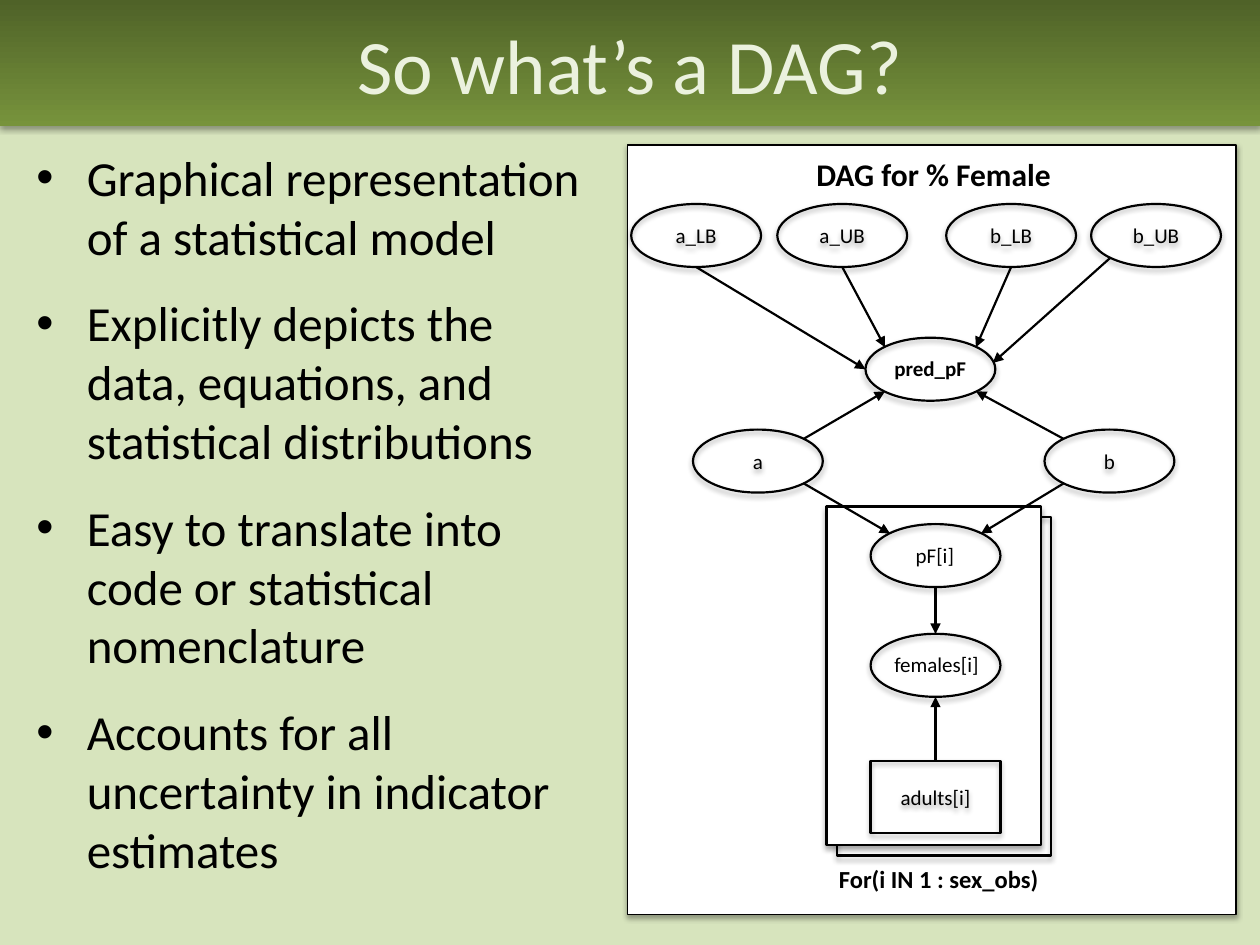
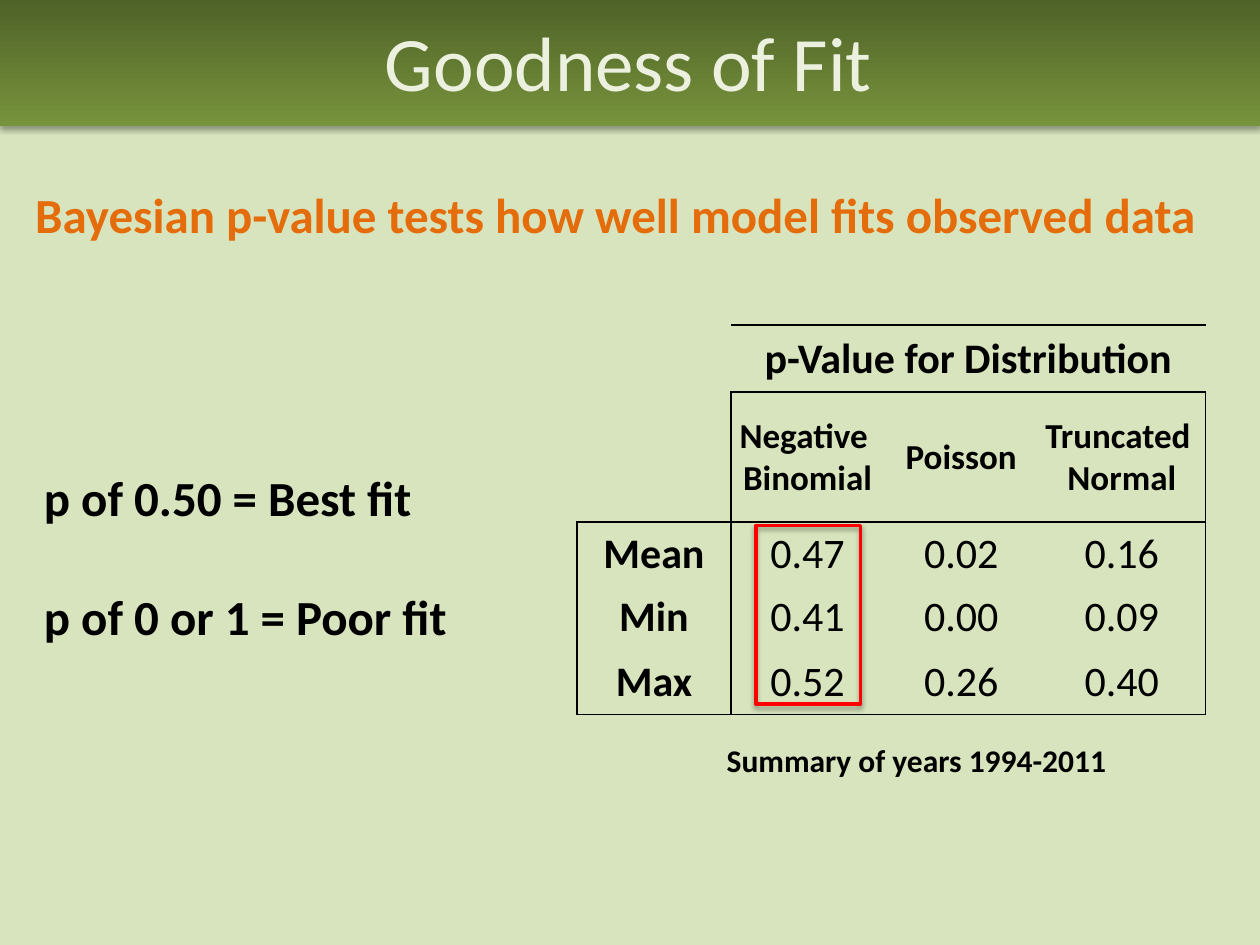
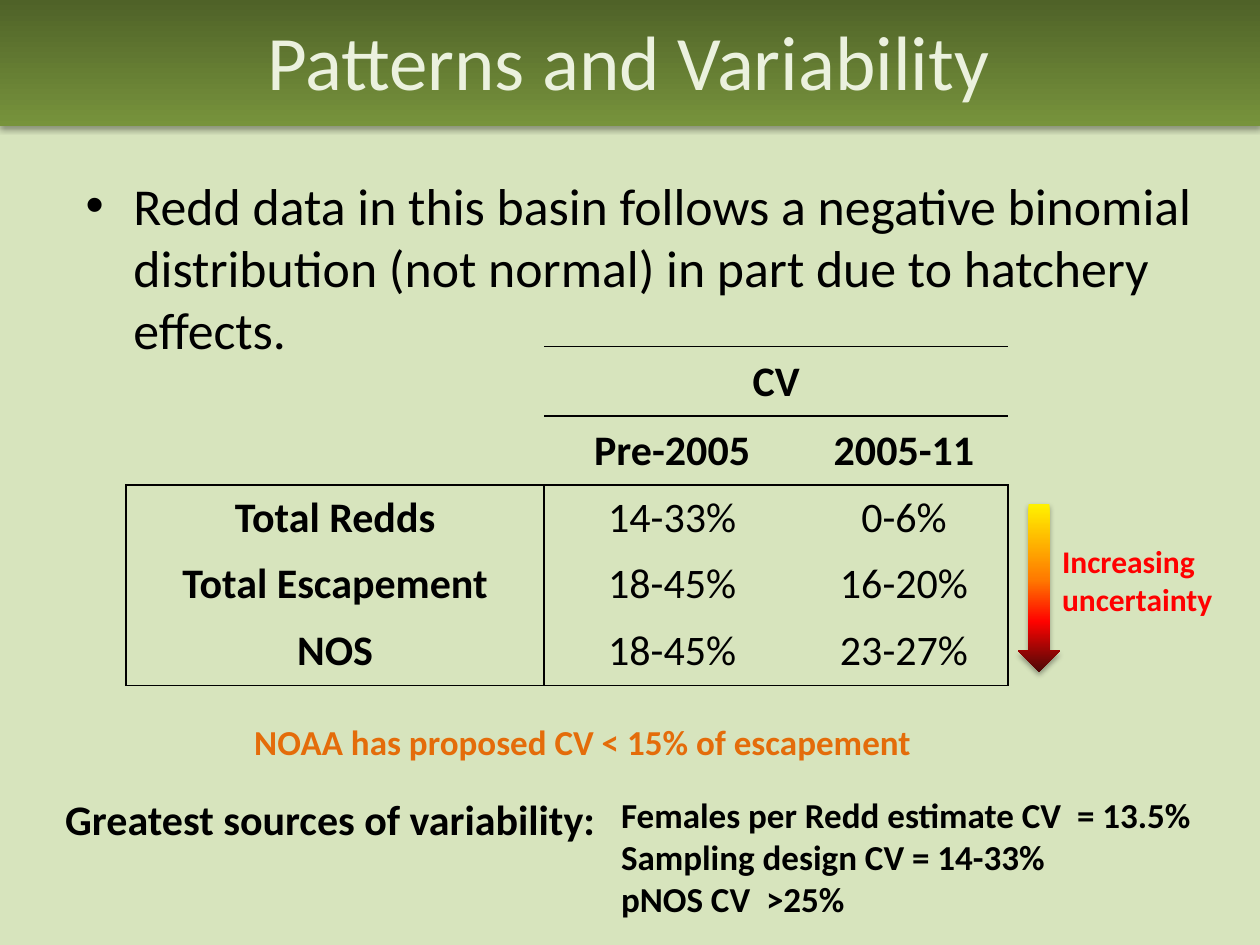
from pptx import Presentation
from pptx.dml.color import RGBColor
from pptx.enum.shapes import MSO_CONNECTOR as CONNECTOR, MSO_SHAPE as SHAPE
from pptx.enum.text import MSO_ANCHOR as ANCHOR, MSO_AUTO_SIZE as AUTO_SIZE, PP_ALIGN as ALIGN
from pptx.oxml.ns import qn
from pptx.util import Pt
from lxml.etree import SubElement, Element

# Shared look
FONT = "Calibri"
BACKGROUND, BLACK, WHITE = "D7E4BD", "000000", "FFFFFF"
TITLE, ORANGE, RED = "EBF1DE", "E46C0A", "FF0000"
BAND_STOPS = [(0, "4F6228"), (100, "77933C")]
ARROW_STOPS = [(0, "FFF200"), (45, "FF7A00"), (70, "FF0300"), (100, "4D0808")]

# DAG slide
DAG_BULLETS = [
    "Graphical representation of a statistical model",
    "Explicitly depicts the data, equations, and statistical distributions",
    "Easy to translate into code or statistical nomenclature",
    "Accounts for all uncertainty in indicator estimates",
]
PANEL = (358.6, 82.8, 347.8, 439.9)
PLATE = (472.3, 289.4, 122.4, 193.7)
PLATE_OFFSET = 5.8
NODE_WIDTH, NODE_HEIGHT, DATA_HEIGHT = 74.2, 36, 41
NODES = {
    "a_LB": (360.7, 116.6), "a_UB": (444.2, 116.6),
    "b_LB": (540.7, 116.6), "b_UB": (623.5, 116.6),
    "pred_pF": (494.6, 193),
    "a": (396, 245.5), "b": (596.9, 245.5),
    "pF[i]": (497.5, 299.5), "females[i]": (497.5, 362.2),
    "adults[i]": (497.5, 434.9),
}
# Nodes whose label lies in a box of its own
LABEL_BOXES = {
    "pred_pF": (504, 199.4, 74.9, 21.6),
    "pF[i]": (516.2, 306.7, 38.2, 22.3),
    "females[i]": (504, 368.6, 74.9, 21.6),
}
# Points on a node's outline, as shares of its width and height
SITES = {
    "top": (0.5, 0), "bottom": (0.5, 1), "left": (0, 0.5),
    "top left": (0.15, 0.15), "top right": (0.85, 0.15),
    "bottom left": (0.15, 0.85), "bottom right": (0.85, 0.85),
    "upper right": (0.98, 0.4),
}
EDGES = [
    ("a_LB", "bottom", "pred_pF", "left"),
    ("a_UB", "bottom", "pred_pF", "top left"),
    ("b_LB", "bottom", "pred_pF", "top right"),
    ("b_UB", "bottom left", "pred_pF", "upper right"),
    ("a", "top right", "pred_pF", "bottom left"),
    ("b", "top left", "pred_pF", "bottom right"),
    ("a", "bottom right", "pF[i]", "top left"),
    ("b", "bottom left", "pF[i]", "top right"),
    ("pF[i]", "bottom", "females[i]", "top"),
    ("adults[i]", "top", "females[i]", "bottom"),
]

# Tables: border letters are left, right, top, bottom; "-" is none
FIT_TABLE = {
    "at": (329.8, 185.8),
    "columns": [87.8, 87.8, 87.8, 95.8],
    "heights": [38.2, 74.2, 36, 36, 38.2],
    "sizes": [24, 20, 24, 24, 24],
    "rows": [
        ["", "p-Value for Distribution", "", ""],
        ["", "Negative \vBinomial", "Poisson", "Truncated \vNormal"],
        ["Mean", "0.47", "0.02", "0.16"],
        ["Min", "0.41", "0.00", "0.09"],
        ["Max", "0.52", "0.26", "0.40"],
    ],
    "borders": ["- tb tb tb", "rb ltb tb trb", "ltr lt t tr", "lr l - r", "lrb lb b rb"],
}
CV_TABLE = {
    "at": (72, 198),
    "columns": [239, 146.2, 118.8],
    "heights": [39.6, 39.6, 37.4, 37.4, 39.6],
    "sizes": [24] * 5,
    "rows": [
        ["", "CV", ""],
        ["", "Pre-2005", "2005-11"],
        ["Total Redds", "14-33%", "0-6%"],
        ["Total Escapement", "18-45%", "16-20%"],
        ["NOS", "18-45%", "23-27%"],
    ],
    "borders": ["- tb tb", "b tb tb", "ltr lt tr", "lr l r", "lrb lb rb"],
}
HEADER_ROWS = 2
REDD_BULLET = ("Redd data in this basin follows a negative binomial distribution "
               "(not normal) in part due to hatchery effects.")
VARIABILITY_SOURCES = [
    ("Females per Redd estimate CV  = 13.5%", 343.4),
    ("Sampling design CV = 14-33%", 263.5),
    ("pNOS CV  >25%", 148.3),
]


def rgb(value):
    return RGBColor.from_string(value)


def points(values):
    return [Pt(value) for value in values]


def style(paragraph, size, color=BLACK, bold=False):
    for run in paragraph.runs:
        font = run.font
        font.name, font.size, font.bold = FONT, Pt(size), bold
        font.color.rgb = rgb(color)


def add_bullet(paragraph, indent):
    properties = paragraph._p.get_or_add_pPr()
    properties.set("marL", str(Pt(indent)))
    properties.set("indent", str(-Pt(indent)))
    SubElement(properties, qn("a:buFont"), typeface="Arial")
    SubElement(properties, qn("a:buChar"), char="•")


def add_text(slide, lines, box, size, color=BLACK, bold=False, wrap=True, align=ALIGN.LEFT,
             anchor=ANCHOR.TOP, indent=0, before=0, after=0, grow=True):
    frame = slide.shapes.add_textbox(*points(box)).text_frame
    frame.word_wrap = wrap
    frame.auto_size = AUTO_SIZE.SHAPE_TO_FIT_TEXT if grow else AUTO_SIZE.NONE
    frame.vertical_anchor = anchor
    frame.text = "\n".join(lines)
    for index, paragraph in enumerate(frame.paragraphs):
        paragraph.alignment = align
        if before and index:
            paragraph.space_before = Pt(before)
        if after:
            paragraph.space_after = Pt(after)
        if indent:
            add_bullet(paragraph, indent)
        style(paragraph, size, color, bold)


def add_shadow(shape):
    shape.shadow.inherit = False
    effects = shape._element.spPr.find(qn("a:effectLst"))
    shadow = SubElement(effects, qn("a:outerShdw"), blurRad=str(Pt(3.1)), dist=str(Pt(1.8)),
                        dir="5400000", rotWithShape="0")
    color = SubElement(shadow, qn("a:srgbClr"), val=BLACK)
    SubElement(color, qn("a:alpha"), val="35000")


def fill_gradient(shape, stops):
    shape.fill.gradient()
    shape.fill.gradient_angle = 270
    stop_list = shape._element.spPr.find(qn("a:gradFill")).find(qn("a:gsLst"))
    for old_stop in list(stop_list):
        stop_list.remove(old_stop)
    for position, color in stops:
        stop = SubElement(stop_list, qn("a:gs"), pos=str(position * 1000))
        SubElement(stop, qn("a:srgbClr"), val=color)


def add_box(slide, kind, box, fill=None, line=None, width=1.25, stops=None):
    shape = slide.shapes.add_shape(kind, *points(box))
    if stops:
        fill_gradient(shape, stops)
    elif fill:
        shape.fill.solid()
        shape.fill.fore_color.rgb = rgb(fill)
    else:
        shape.fill.background()
    if line:
        shape.line.color.rgb = rgb(line)
        shape.line.width = Pt(width)
    else:
        shape.line.fill.background()
    add_shadow(shape)
    return shape


def add_arrow(slide, start, end):
    connector = slide.shapes.add_connector(CONNECTOR.STRAIGHT, *points(start + end))
    connector.line.color.rgb = rgb(BLACK)
    connector.line.width = Pt(1.25)
    properties = connector._element.spPr
    SubElement(properties.find(qn("a:ln")), qn("a:tailEnd"), type="triangle")
    SubElement(properties, qn("a:effectLst"))


def set_borders(cell, sides):
    properties = cell._tc.get_or_add_tcPr()
    for index, side in enumerate("lrtb"):
        line = Element(qn("a:ln" + side.upper()), w=str(Pt(1)))
        if side in sides:
            SubElement(SubElement(line, qn("a:solidFill")), qn("a:srgbClr"), val=BLACK)
        else:
            SubElement(line, qn("a:noFill"))
        properties.insert(index, line)


def add_table(slide, data):
    rows, widths, heights = data["rows"], data["columns"], data["heights"]
    box = (*data["at"], sum(widths), sum(heights))
    table = slide.shapes.add_table(len(rows), len(widths), *points(box)).table
    table.first_row = table.horz_banding = False
    for column, width in zip(table.columns, widths):
        column.width = Pt(width)
    for row_index, (texts, borders) in enumerate(zip(rows, data["borders"])):
        table.rows[row_index].height = Pt(heights[row_index])
        for column_index, (text, sides) in enumerate(zip(texts, borders.split())):
            cell = table.cell(row_index, column_index)
            cell.fill.background()
            set_borders(cell, sides)
            cell.margin_left = cell.margin_right = cell.margin_top = Pt(0.7)
            cell.margin_bottom = 0
            cell.vertical_anchor = ANCHOR.MIDDLE
            if text:
                paragraph = cell.text_frame.paragraphs[0]
                paragraph.text = text
                paragraph.alignment = ALIGN.CENTER
                bold = row_index < HEADER_ROWS or column_index == 0
                style(paragraph, data["sizes"][row_index], bold=bold)
    table.cell(0, 1).merge(table.cell(0, len(widths) - 1))


def start_slide(presentation, title, left, top):
    slide = presentation.slides.add_slide(presentation.slide_layouts[6])
    slide.background.fill.solid()
    slide.background.fill.fore_color.rgb = rgb(BACKGROUND)
    add_box(slide, SHAPE.RECTANGLE, (0, 0, 720, 72), stops=BAND_STOPS)
    add_text(slide, [title], (left, top, 648, 90), 44, TITLE, align=ALIGN.CENTER,
             anchor=ANCHOR.MIDDLE, grow=False)
    return slide


def node_box(name):
    return (*NODES[name], NODE_WIDTH, DATA_HEIGHT if name == "adults[i]" else NODE_HEIGHT)


def site_point(name, site):
    left, top, width, height = node_box(name)
    across, down = SITES[site]
    return left + across * width, top + down * height


def build_dag(presentation):
    slide = start_slide(presentation, "So what’s a DAG?", 36, -8.6)
    add_text(slide, DAG_BULLETS, (13.7, 80.6, 334, 429), 28, indent=28.8, after=16)

    # Panel and stacked plates
    add_box(slide, SHAPE.RECTANGLE, PANEL, WHITE, BLACK, 0.75)
    left, top, width, height = PLATE
    back_plate = (left + PLATE_OFFSET, top + PLATE_OFFSET, width, height)
    add_box(slide, SHAPE.RECTANGLE, back_plate, line=BLACK)
    add_box(slide, SHAPE.RECTANGLE, PLATE, WHITE, BLACK)

    # Nodes and arrows
    for name in NODES:
        kind = SHAPE.RECTANGLE if name == "adults[i]" else SHAPE.OVAL
        node = add_box(slide, kind, node_box(name), line=BLACK)
        if name in LABEL_BOXES:
            add_text(slide, [name], LABEL_BOXES[name], 12, bold=name == "pred_pF")
        else:
            frame = node.text_frame
            frame.text = name
            frame.vertical_anchor = ANCHOR.MIDDLE
            frame.paragraphs[0].alignment = ALIGN.CENTER
            style(frame.paragraphs[0], 12)
    for source, source_site, target, target_site in EDGES:
        add_arrow(slide, site_point(source, source_site), site_point(target, target_site))

    add_text(slide, ["For(i IN 1 : sex_obs)"], (472.3, 490.3, 129.6, 24.5), 14,
             bold=True, wrap=False)
    add_text(slide, ["DAG for % Female"], (459.4, 85, 149.8, 28.8), 18, bold=True, wrap=False)


def build_fit(presentation):
    slide = start_slide(presentation, "Goodness of Fit", 35.3, -10.1)
    add_table(slide, FIT_TABLE)
    add_text(slide, ["p of 0.50 = Best fit", "p of 0 or 1 = Poor fit"], (18, 234, 329.8, 138.2),
             28, bold=True, anchor=ANCHOR.BOTTOM, before=34, grow=False)
    add_text(slide, ["Bayesian p-value tests how well model fits observed data"],
             (13, 102.2, 707, 74.9), 28, ORANGE, bold=True)
    add_box(slide, SHAPE.RECTANGLE, (432, 300.2, 59.8, 102.2), line=RED, width=2)
    add_text(slide, ["Summary of years 1994-2011"], (408.2, 419.8, 233.3, 28.8), 18,
             bold=True, wrap=False)


def build_patterns(presentation):
    slide = start_slide(presentation, "Patterns and Variability", 35.3, -10.8)
    add_text(slide, [REDD_BULLET], (41.8, 95.8, 648, 131.8), 29.6, indent=27.4, after=24,
             grow=False)
    add_table(slide, CV_TABLE)
    add_text(slide, ["NOAA has proposed CV < 15% of escapement"], (138.2, 408.2, 397.4, 31.7),
             20, ORANGE, bold=True, wrap=False)

    # Sources of variability
    add_text(slide, ["Greatest sources of variability:"], (30.2, 450, 326.2, 36), 24,
             bold=True, wrap=False)
    for index, (text, width) in enumerate(VARIABILITY_SOURCES):
        add_text(slide, [text], (347.8, 450 + 24 * index, width, 31.7), 20,
                 bold=True, wrap=False)

    # Uncertainty arrow
    add_box(slide, SHAPE.DOWN_ARROW, (581.8, 288, 23.8, 95.8), stops=ARROW_STOPS)
    add_text(slide, ["Increasing", "uncertainty"], (599.8, 306, 100.8, 51.1), 18, RED,
             bold=True, wrap=False)


def main():
    presentation = Presentation()
    presentation.slide_width, presentation.slide_height = Pt(720), Pt(540)
    build_dag(presentation)
    build_fit(presentation)
    build_patterns(presentation)
    presentation.save("out.pptx")


if __name__ == "__main__":
    main()
